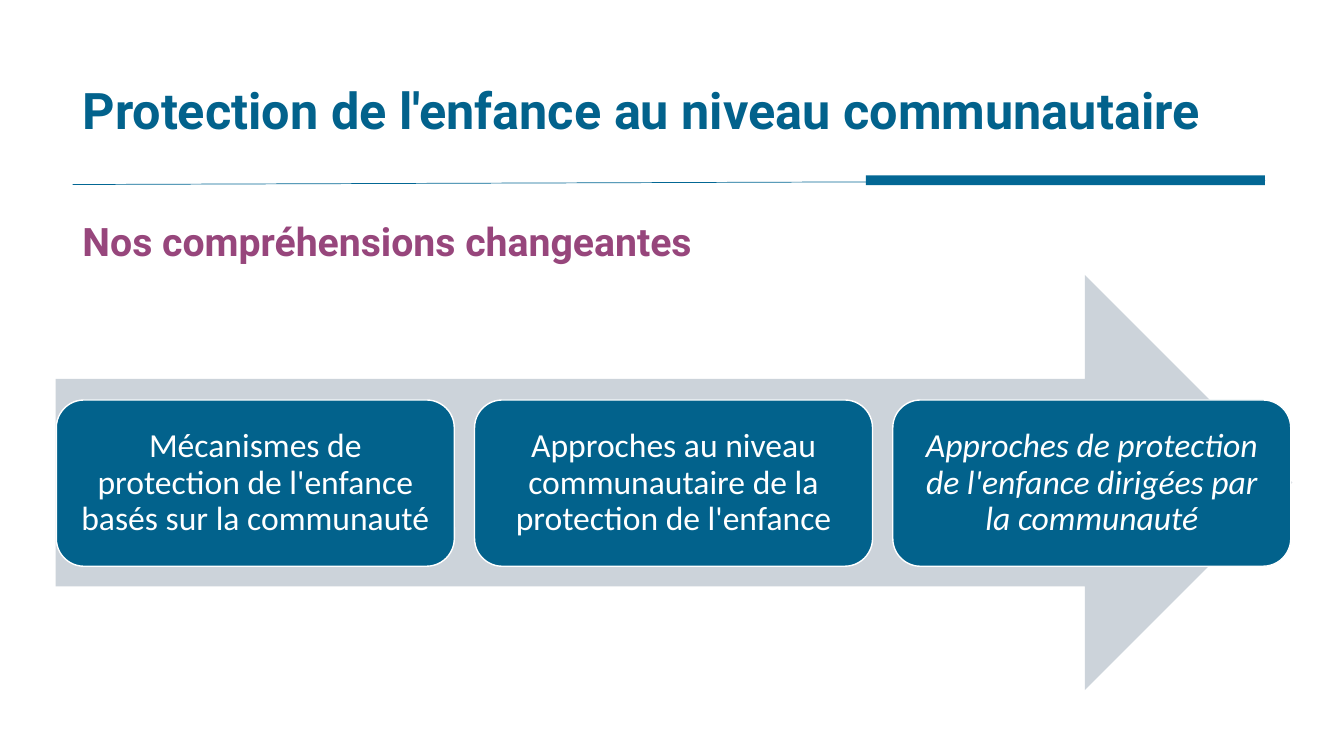
from lxml import etree
from pptx import Presentation
from pptx import util as u
from pptx.dml import color
from pptx.enum import shapes, text
from pptx.oxml import ns

TITLE = "Protection de l'enfance au niveau communautaire"
SUBTITLE = "Nos compréhensions changeantes"
STEPS = [
    ("Mécanismes de protection de l'enfance basés sur la communauté", False),
    ("Approches au niveau communautaire de la protection de l'enfance", False),
    ("Approches de protection de l'enfance dirigées par la communauté", True),
]
BLUE, RULE_BLUE, PURPLE, GREY, WHITE = "02628C", "036794", "97467C", "CCD3DA", "FFFFFF"
LEFT, RIGHT = 1.83, 31.88
STEP_LEFT, STEP_TOP, STEP_WIDTH, STEP_HEIGHT, STEP_GAP = 1.42, 10.08, 10.03, 4.19, 0.51


def rgb(value):
    return color.RGBColor.from_string(value)


def write(box, words, font, size, tint, bold=False, italic=False, align=text.PP_ALIGN.LEFT,
          anchor=text.MSO_ANCHOR.MIDDLE):
    frame = box.text_frame
    frame.word_wrap = True
    frame.vertical_anchor = anchor
    para = frame.paragraphs[0]
    para.text = words
    para.alignment = align
    para.line_spacing = 0.9
    para.font.name, para.font.size = font, u.Pt(size)
    para.font.bold, para.font.italic = bold, italic
    para.font.color.rgb = rgb(tint)


def add_block(page, kind, area, fill, line=None):
    block = page.shapes.add_shape(kind, *map(u.Cm, area))
    block.shadow.inherit = False
    block.fill.solid()
    block.fill.fore_color.rgb = rgb(fill)
    if line:
        block.line.color.rgb = rgb(line)
        block.line.width = u.Pt(1)
    else:
        block.line.fill.background()
    return block


def add_heading(page):
    rule = page.shapes.add_connector(
        shapes.MSO_CONNECTOR.STRAIGHT, u.Cm(LEFT), u.Cm(4.65), u.Cm(RIGHT), u.Cm(4.55))
    rule.line.color.rgb = rgb(RULE_BLUE)
    rule.line.width = u.Pt(0.5)
    etree.SubElement(rule.element.spPr, ns.qn("a:effectLst"))
    add_block(page, shapes.MSO_SHAPE.RECTANGLE, (21.82, 4.42, RIGHT - 21.82, 0.25), RULE_BLUE)

    title = page.shapes.add_textbox(u.Cm(LEFT), u.Cm(1.02), u.Cm(29.21), u.Cm(3.68))
    write(title, TITLE, "Roboto", 36, BLUE, bold=True)
    subtitle = page.shapes.add_textbox(u.Cm(LEFT), u.Cm(5.49), u.Cm(RIGHT - LEFT), u.Cm(1.4))
    write(subtitle, SUBTITLE, "Roboto", 28, PURPLE, bold=True, anchor=text.MSO_ANCHOR.TOP)


def add_steps(page):
    add_block(page, shapes.MSO_SHAPE.RIGHT_ARROW, (1.4, 6.93, 31.17, 10.46), GREY)
    for index, (words, italic) in enumerate(STEPS):
        left = STEP_LEFT + index * (STEP_WIDTH + STEP_GAP)
        step = add_block(page, shapes.MSO_SHAPE.ROUNDED_RECTANGLE,
                         (left, STEP_TOP, STEP_WIDTH, STEP_HEIGHT), BLUE, WHITE)
        write(step, words, "Calibri", 24, WHITE, italic=italic, align=text.PP_ALIGN.CENTER)


def main():
    """Build the slide on changing views of community child protection."""
    deck = Presentation()
    deck.slide_width, deck.slide_height = u.Cm(33.87), u.Cm(19.05)
    page = deck.slides.add_slide(deck.slide_layouts[6])
    add_heading(page)
    add_steps(page)
    deck.save("out.pptx")


if __name__ == "__main__":
    main()
